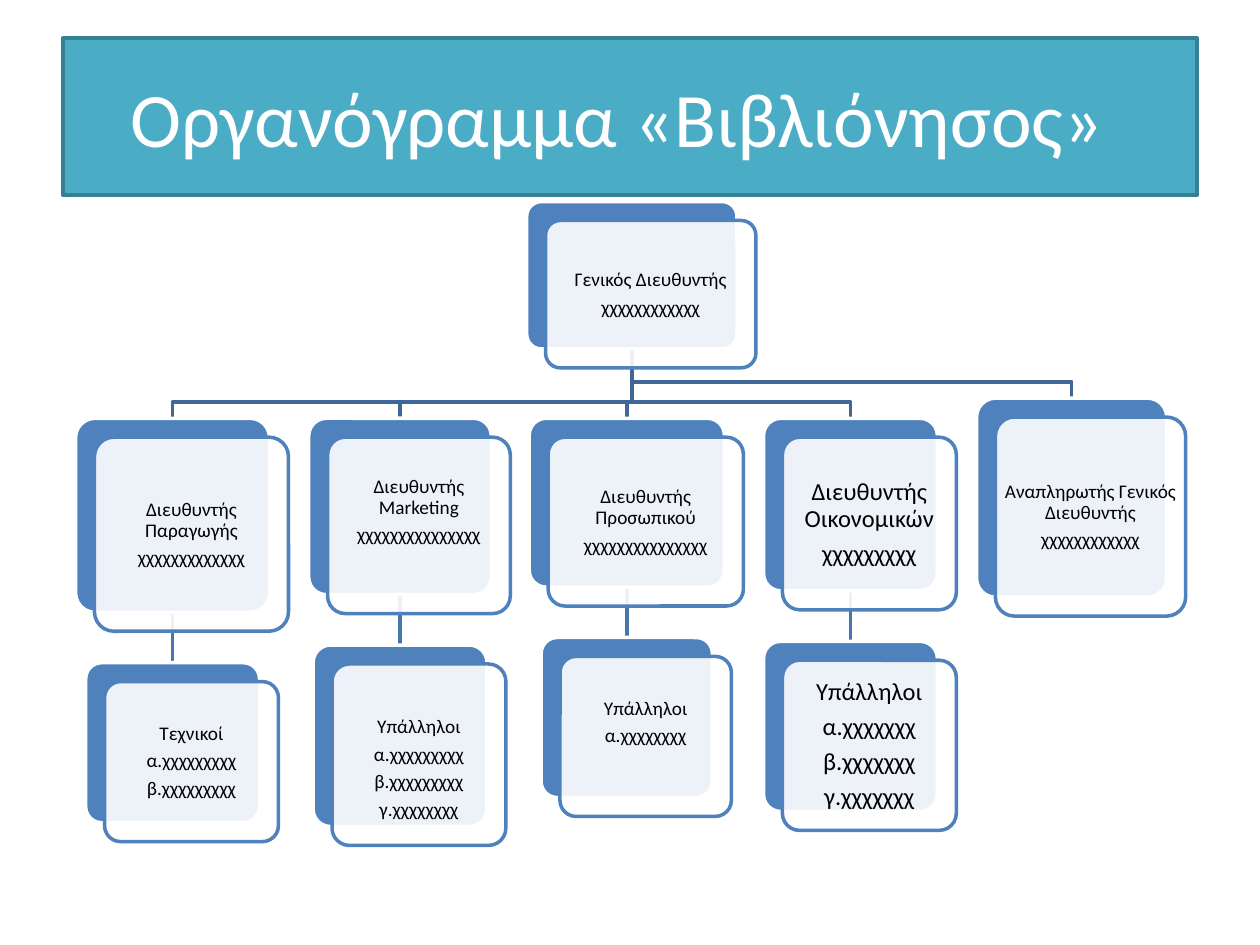
from lxml.etree import SubElement
from pptx import Presentation
from pptx.dml.color import RGBColor
from pptx.enum.shapes import MSO_CONNECTOR, MSO_SHAPE
from pptx.enum.text import MSO_ANCHOR, PP_ALIGN
from pptx.oxml.ns import qn
from pptx.util import Inches, Pt

BLUE = "4F81BD"
OFFSET = 0.15  # shift of the front card from the back card
BEND = 0.13  # height of the elbow above a card
STAFF_GAP = 0.4
BLANK_LINE = 0.22  # room kept free above or below some texts


def paint(shape, fill, line):
    """Set a solid fill (or none), a 2 pt outline and no shadow."""
    if fill:
        shape.fill.solid()
        shape.fill.fore_color.rgb = RGBColor.from_string(fill)
    else:
        shape.fill.background()
    shape.line.color.rgb = RGBColor.from_string(line)
    shape.line.width = Pt(2)
    shape.shadow.inherit = False


def add_card(slide, box, lines, size, blank_above=0, blank_below=0):
    """Draw a solid back card and a translucent front card with the text."""
    left, top, width, height = box
    for shift, fill, line in ((0, BLUE, "FFFFFF"), (OFFSET, "FFFFFF", BLUE)):
        card = slide.shapes.add_shape(
            MSO_SHAPE.ROUNDED_RECTANGLE, Inches(left + shift),
            Inches(top + shift), Inches(width), Inches(height))
        card.adjustments[0] = 0.1
        paint(card, fill, line)

    color = card.fill._xPr.find(qn("a:solidFill"))[0]
    SubElement(color, qn("a:alpha"), val="90000")

    frame = card.text_frame
    frame.word_wrap = True
    frame.vertical_anchor = MSO_ANCHOR.MIDDLE
    frame.margin_left = frame.margin_right = Inches(0.01)
    frame.margin_top = Inches(0.01 + blank_above)
    frame.margin_bottom = Inches(0.01 + blank_below)
    for index, text in enumerate(lines):
        paragraph = frame.paragraphs[0] if index == 0 else frame.add_paragraph()
        paragraph.alignment = PP_ALIGN.CENTER
        paragraph.line_spacing = 0.9
        paragraph.space_after = Pt(0.35 * size)
        run = paragraph.add_run()
        run.text = text
        run.font.name = "Calibri"
        run.font.size = Pt(size)
        run.font.color.rgb = RGBColor.from_string("000000")


presentation = Presentation()
presentation.slide_width = Inches(10)
presentation.slide_height = Inches(7.5)
slide = presentation.slides.add_slide(presentation.slide_layouts[6])

# Title
title = slide.shapes.add_shape(
    MSO_SHAPE.RECTANGLE, Inches(0.5), Inches(0.3), Inches(9), Inches(1.25))
paint(title, "4BACC6", "377F92")
title.text_frame.word_wrap = True
title.text_frame.vertical_anchor = MSO_ANCHOR.MIDDLE
title.text_frame.margin_right = Inches(0.3)
paragraph = title.text_frame.paragraphs[0]
paragraph.alignment = PP_ALIGN.CENTER
run = paragraph.add_run()
run.text = "Οργανόγραμμα «Βιβλιόνησος»"
run.font.name = "Calibri"
run.font.size = Pt(44)
run.font.color.rgb = RGBColor.from_string("FFFFFF")

# Organisation: box (left, top, width, height), text, font size, blank space
director = ((4.18, 1.6, 1.67, 1.17), ["Γενικός Διευθυντής", "χχχχχχχχχχχχ"], 11)
managers = [
    ((0.6, 3.32, 1.54, 1.54),
     ["Διευθυντής Παραγωγής", "χχχχχχχχχχχχχ"], 11),
    ((2.45, 3.32, 1.45, 1.4),
     ["Διευθυντής Marketing", "χχχχχχχχχχχχχχχ"], 11, 0, BLANK_LINE),
    ((4.2, 3.32, 1.55, 1.34),
     ["Διευθυντής Προσωπικού", "χχχχχχχχχχχχχχχ"], 11),
    ((6.06, 3.32, 1.38, 1.37),
     ["Διευθυντής Οικονομικών", "χχχχχχχχχ"], 14),
]
deputy = ((7.75, 3.16, 1.51, 1.58),
          ["Αναπληρωτής Γενικός Διευθυντής", "χχχχχχχχχχχχ"], 11)
# Staff: width, height, text, font size, blank space; one entry per manager
staff = [
    (1.38, 1.27, ["Τεχνικοί", "α.χχχχχχχχχ", "β.χχχχχχχχχ"], 11),
    (1.38, 1.44, ["Υπάλληλοι", "α.χχχχχχχχχ", "β.χχχχχχχχχ", "γ.χχχχχχχχ"],
     11, BLANK_LINE),
    (1.36, 1.27, ["Υπάλληλοι", "α.χχχχχχχχ"], 11, 0, BLANK_LINE),
    (1.38, 1.35, ["Υπάλληλοι", "α.χχχχχχχ", "β.χχχχχχχ", "γ.χχχχχχχ"], 14),
]

# Elbow lines from the director to each direct report
left, top, width, height = director[0]
start_x, start_y = left + width / 2, top + height
for report in [deputy] + managers[::-1]:
    left, top, width, height = report[0]
    center = left + width / 2
    builder = slide.shapes.build_freeform(
        Inches(start_x), Inches(start_y))
    corners = [(start_x, top - BEND), (center, top - BEND), (center, top)]
    builder.add_line_segments(
        [(Inches(x), Inches(y)) for x, y in corners], close=False)
    paint(builder.convert_to_shape(), None, "3F6797")

# Straight lines from each manager to the staff
for manager in managers:
    left, top, width, height = manager[0]
    center, bottom = left + width / 2, top + height
    connector = slide.shapes.add_connector(
        MSO_CONNECTOR.STRAIGHT, Inches(center), Inches(bottom),
        Inches(center), Inches(bottom + STAFF_GAP))
    connector.line.color.rgb = RGBColor.from_string("4875AC")
    connector.line.width = Pt(2)
    SubElement(connector._element.spPr, qn("a:effectLst"))

# Cards
add_card(slide, *director)
for manager, (staff_width, staff_height, *content) in zip(managers, staff):
    add_card(slide, *manager)
    left, top, width, height = manager[0]
    staff_box = (left + (width - staff_width) / 2, top + height + STAFF_GAP,
                 staff_width, staff_height)
    add_card(slide, staff_box, *content)
add_card(slide, *deputy)

presentation.save("out.pptx")
